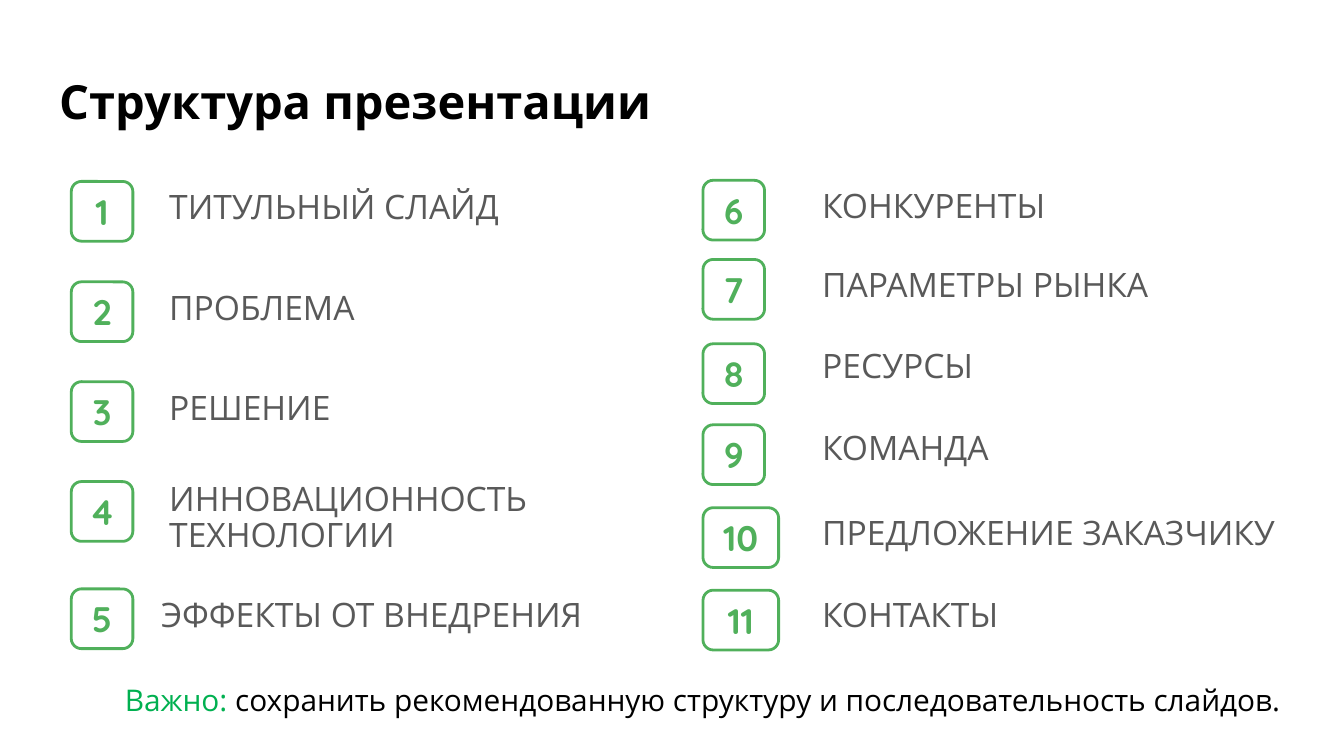
from pptx import Presentation
from pptx.dml.color import RGBColor
from pptx.enum.shapes import MSO_SHAPE
from pptx.enum.text import MSO_ANCHOR, MSO_AUTO_SIZE, PP_ALIGN
from pptx.util import Pt

GREEN = RGBColor(0x50, 0xB0, 0x5B)
ACCENT = RGBColor(0x00, 0xB0, 0x50)
GREY = RGBColor(0x59, 0x59, 0x59)
BLACK = RGBColor(0, 0, 0)
WHITE = RGBColor(255, 255, 255)
BODY_FONT = "Open Sans"
NUMBER_FONT = "Quicksand"
INSET = 7.2

# Number, label, badge top, label left, label top, label height;
# positions are relative to the column
LEFT_ITEMS = [
    (1, "ТИТУЛЬНЫЙ СЛАЙД", 3.2, 45.4, 1, 36),
    (2, "ПРОБЛЕМА", 57, 45.4, 55, 36),
    (3, "РЕШЕНИЕ", 110.5, 45.4, 108.3, 36),
    (4, "ИННОВАЦИОННОСТЬ ТЕХНОЛОГИИ", 164, 45.4, 157.3, 58),
    (5, "ЭФФЕКТЫ ОТ ВНЕДРЕНИЯ", 221.5, 41, 219.2, 36),
]
RIGHT_ITEMS = [
    (6, "КОНКУРЕНТЫ", 2.6, 56.8, 0.4, 36),
    (7, "ПАРАМЕТРЫ РЫНКА", 45, 56.8, 42.8, 36),
    (8, "РЕСУРСЫ", 90.2, 56.8, 86, 36),
    (9, "КОМАНДА", 133.6, 56.8, 129.9, 36),
    (10, "ПРЕДЛОЖЕНИЕ ЗАКАЗЧИКУ", 178, 56.8, 175.4, 36),
    (11, "КОНТАКТЫ", 222.2, 56.8, 219.2, 36),
]


def place(shape, left, top, width, height):
    shape.left, shape.top = Pt(left), Pt(top)
    shape.width, shape.height = Pt(width), Pt(height)


def set_frame(frame, anchor=MSO_ANCHOR.TOP):
    frame.word_wrap = True
    frame.auto_size = MSO_AUTO_SIZE.NONE
    frame.vertical_anchor = anchor
    frame.margin_left = frame.margin_right = Pt(INSET)
    frame.margin_top = frame.margin_bottom = Pt(INSET)


def write(frame, spans, size, font=BODY_FONT, bold=False,
          align=PP_ALIGN.LEFT, spacing=0.9):
    para = frame.paragraphs[0]
    para.alignment = align
    para.line_spacing = spacing
    for text, color in spans:
        span = para.add_run()
        span.text = text
        span.font.name = font
        span.font.size = Pt(size)
        span.font.bold = bold
        span.font.color.rgb = color


def add_title(slide, left, top, width, height):
    title = slide.shapes.title
    place(title, left, top, width, height)
    set_frame(title.text_frame)
    write(title.text_frame, [("Структура презентации", BLACK)], 25.2, bold=True)


def add_text(slide, spans, size, left, top, width, height):
    box = slide.shapes.add_textbox(Pt(left), Pt(top), Pt(width), Pt(height))
    set_frame(box.text_frame)
    write(box.text_frame, spans, size)


def add_badge(slide, number, left, top):
    width = 33 if number < 10 else 40.5
    badge = slide.shapes.add_shape(
        MSO_SHAPE.ROUNDED_RECTANGLE, Pt(left), Pt(top), Pt(width), Pt(32))
    badge.adjustments[0] = 0.17
    badge.shadow.inherit = False
    badge.fill.solid()
    badge.fill.fore_color.rgb = WHITE
    badge.line.color.rgb = GREEN
    badge.line.width = Pt(1.5)
    set_frame(badge.text_frame, MSO_ANCHOR.MIDDLE)
    write(badge.text_frame, [(str(number), GREEN)], 19, NUMBER_FONT, True,
          PP_ALIGN.CENTER, 1.0)


def add_column(slide, items, left, top):
    for number, label, badge_top, label_left, label_top, height in items:
        add_badge(slide, number, left, top + badge_top)
        add_text(slide, [(label, GREY)], 18,
                 left + label_left, top + label_top, 276.5, height)


def add_note(slide, left, top, width, height):
    spans = [
        ("Важно: ", ACCENT),
        ("сохранить рекомендованную структуру и последовательность слайдов.", BLACK),
    ]
    add_text(slide, spans, 16, left, top, width, height)


def main():
    deck = Presentation()
    deck.slide_width, deck.slide_height = Pt(720), Pt(405)
    page = deck.slides.add_slide(deck.slide_layouts[5])

    # Heading
    add_title(page, 24.5, 35.3, 671, 45.4)
    # Numbered sections
    add_column(page, LEFT_ITEMS, 38.2, 94)
    add_column(page, RIGHT_ITEMS, 376.6, 94)
    # Closing note
    add_note(page, 59.8, 360, 649.4, 31.7)

    deck.save("out.pptx")


if __name__ == "__main__":
    main()
